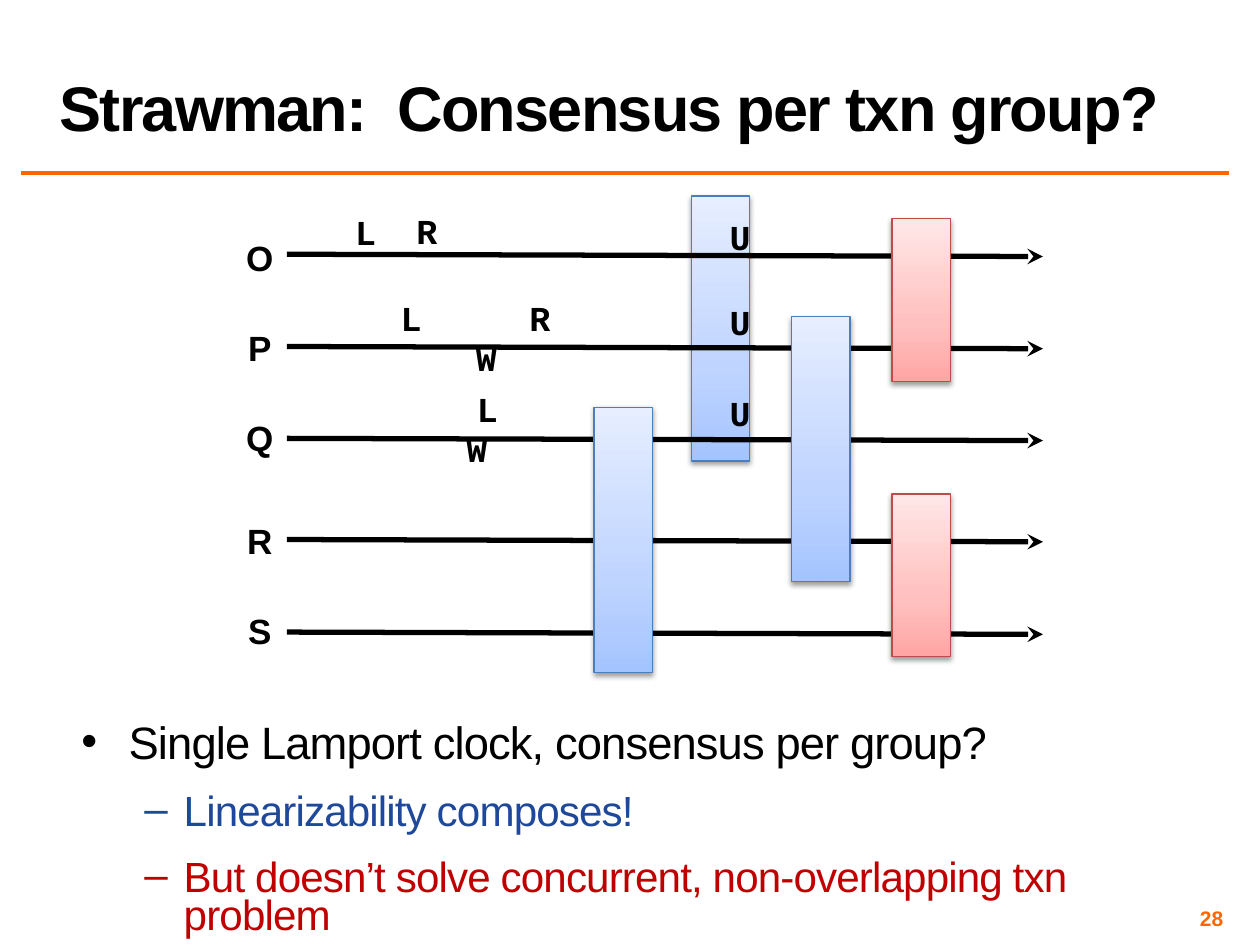
from lxml.etree import SubElement
from pptx import Presentation
from pptx.dml.color import RGBColor
from pptx.enum.shapes import MSO_CONNECTOR, MSO_SHAPE
from pptx.enum.text import MSO_ANCHOR, PP_ALIGN
from pptx.oxml.ns import qn
from pptx.util import Pt

BLUE = ("4B7EBC", ("A4C4FF", "BFD4FF", "E6EEFF"))
RED = ("BF4C48", ("FFA6A5", "FFC0BF", "FFE7E7"))
ORANGE = "FF6600"
BLACK = "000000"


def rgb(code):
    return RGBColor.from_string(code)


def add_xml(parent, tag, **attrs):
    return SubElement(parent, qn(tag), {k: str(v) for k, v in attrs.items()})


class Sketch:
    font = "Arial"
    mono = "Courier New"

    def __init__(self, slide):
        self.s = slide

    def style(self, p, size, color=BLACK, bold=False, font=None, spacing=0):
        for r in p.runs:
            r.font.name = font or self.font
            r.font.size = Pt(size)
            r.font.bold = bold
            r.font.color.rgb = rgb(color)
            if spacing:
                r.font._element.set("spc", str(int(spacing * 100)))

    def box(self, x, y, w, h, inset=None, anchor=MSO_ANCHOR.TOP, wrap=True):
        tf = self.s.shapes.add_textbox(Pt(x), Pt(y), Pt(w), Pt(h)).text_frame
        tf.word_wrap = wrap
        tf.vertical_anchor = anchor
        if inset is not None:
            tf.margin_left = tf.margin_right = Pt(inset)
            tf.margin_top = tf.margin_bottom = Pt(inset)
        return tf

    def letter(self, text, center, y, font=None):
        w = 30
        tf = self.box(center - w / 2, y, w, 31.5, wrap=False)
        tf.text = text
        p = tf.paragraphs[0]
        p.alignment = PP_ALIGN.CENTER
        self.style(p, 20, bold=True, font=font)

    def line(self, x1, y1, x2, y2, width, color=BLACK, arrow=False):
        c = self.s.shapes.add_connector(
            MSO_CONNECTOR.STRAIGHT, Pt(x1), Pt(y1), Pt(x2), Pt(y2))
        c.line.width = Pt(width)
        c.line.color.rgb = rgb(color)
        if arrow:
            add_xml(c.line._get_or_add_ln(), "a:tailEnd", type="stealth")
        add_xml(c._element.spPr, "a:effectLst")

    def bar(self, x, y, h, palette):
        edge, colors = palette
        sp = self.s.shapes.add_shape(
            MSO_SHAPE.RECTANGLE, Pt(x), Pt(y), Pt(33.5), Pt(h))
        sp.line.color.rgb = rgb(edge)
        sp.line.width = Pt(0.75)
        # Three-stop gradient, light at the top
        sp.fill.gradient()
        sp.fill.gradient_angle = 90
        stops = sp._element.spPr.find(".//" + qn("a:gsLst"))
        stops.clear()
        for pos, color in zip((0, 35, 100), colors):
            gs = add_xml(stops, "a:gs", pos=pos * 1000)
            add_xml(gs, "a:srgbClr", val=color)
        # Soft shadow below
        sp.shadow.inherit = False
        effects = sp._element.spPr.find(qn("a:effectLst"))
        shadow = add_xml(effects, "a:outerShdw", blurRad=Pt(3.1), dist=Pt(1.6),
                         dir=90 * 60000, rotWithShape=0)
        clr = add_xml(shadow, "a:srgbClr", val=BLACK)
        add_xml(clr, "a:alpha", val=38000)

    def bullets(self, tf, items):
        tf.text = "\n".join(item[0] for item in items)
        for p, (_, level, size, color) in zip(tf.paragraphs, items):
            p.level = level
            p.line_spacing = 0.75 if level else 0.8
            p.space_before = Pt(8 if level else 30)
            p.space_after = Pt(8)
            left, hang, mark = (58.5, 22.5, "–") if level else (27, 27, "•")
            pPr = p._p.get_or_add_pPr()
            pPr.set("marL", str(Pt(left)))
            pPr.set("indent", str(-Pt(hang)))
            add_xml(pPr, "a:buFont", typeface=self.font)
            add_xml(pPr, "a:buChar", char=mark)
            self.style(p, size, color, spacing=-0.5)


def main():
    prs = Presentation()
    prs.slide_width, prs.slide_height = Pt(720), Pt(540)
    k = Sketch(prs.slides.add_slide(prs.slide_layouts[6]))

    # Title, rule and slide number
    k.line(12, 98.8, 702, 98.8, 2, ORANGE)
    tf = k.box(27, 1.5, 675, 84, anchor=MSO_ANCHOR.BOTTOM)
    tf.text = "Strawman:  Consensus per txn group?"
    p = tf.paragraphs[0]
    p.line_spacing = 0.8
    k.style(p, 36, bold=True, spacing=-1)
    tf = k.box(534, 516, 168, 17, inset=3, anchor=MSO_ANCHOR.MIDDLE)
    tf.text = "28"
    tf.paragraphs[0].alignment = PP_ALIGN.RIGHT
    k.style(tf.paragraphs[0], 12, ORANGE, bold=True)

    # Group behind the timelines
    k.bar(395, 112, 151.5, BLUE)

    # Timelines: name, line y, label y
    for name, y, label_y in (("O", 145.3, 131.8), ("P", 198, 183),
                             ("Q", 250.5, 234.7), ("R", 308.3, 293.5),
                             ("S", 361.2, 345)):
        k.line(164, y, 596, y + 1.3, 3, arrow=True)
        k.letter(name, 148.5, label_y)

    # Operations: kind, centre x, top
    for op, x, y in (("L", 209, 116.6), ("R", 244, 115.9), ("U", 423, 119.5),
                     ("L", 235, 165.6), ("R", 308.5, 165.6), ("W", 278, 189),
                     ("U", 423, 168), ("L", 278.5, 218), ("W", 272.5, 241),
                     ("U", 423, 220.3)):
        k.letter(op, x, y, k.mono)

    # Groups in front of the timelines
    for x, y in ((339.5, 232.7), (452.3, 180.8)):
        k.bar(x, y, 151.5, BLUE)
    for y in (125, 282.3):
        k.bar(509.7, y, 93, RED)

    # Conclusions
    k.bullets(k.box(43.5, 411, 658.5, 113, inset=3), (
        ("Single Lamport clock, consensus per group?", 0, 25.9, BLACK),
        ("Linearizability composes!", 1, 24.1, "1E4899"),
        ("But doesn’t solve concurrent, non-overlapping txn problem",
         1, 24.1, "C00000")))

    prs.save("out.pptx")


if __name__ == "__main__":
    main()
